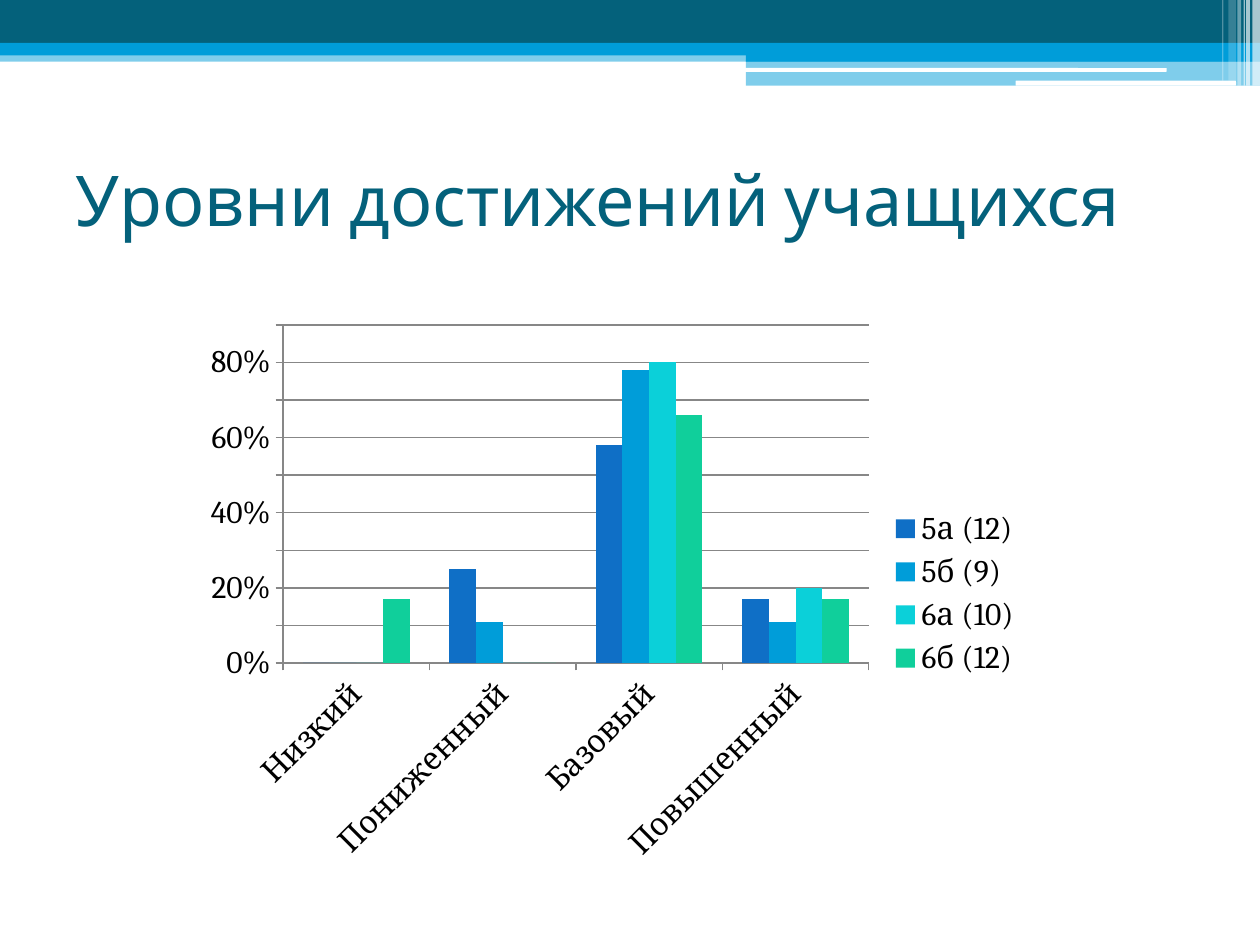
import pptx
import pptx.chart.data
import pptx.dml.color
import pptx.enum.chart
import pptx.enum.shapes
import pptx.enum.text
import pptx.oxml
import pptx.oxml.ns
import pptx.util

# Slide grid: 1000 columns by 750 rows
COLUMNS, ROWS = 1000, 750
CELL = pptx.util.Inches(10) // COLUMNS
TEAL, BLUE, WHITE, GRAY = "04617B", "009DD9", "FFFFFF", "878787"
RECTANGLE = pptx.enum.shapes.MSO_SHAPE.RECTANGLE
ROUNDED = pptx.enum.shapes.MSO_SHAPE.ROUNDED_RECTANGLE

# left, top, width, height within the banner; colour, opacity in percent, shape
BANNER_PARTS = [
    (0, 40, 1000, 9, BLUE, 50, RECTANGLE),
    (0, 0, 1000, 34, TEAL, 100, RECTANGLE),
    (0, 34, 1000, 10, BLUE, 100, RECTANGLE),
    (592, 39, 408, 10, BLUE, 100, RECTANGLE),
    (592, 48, 408, 20, BLUE, 50, RECTANGLE),
    (591, 54, 335, 3, WHITE, 100, ROUNDED),
    (806, 64, 175, 4, WHITE, 100, ROUNDED),
]
# left, width, height, opacity of the light stripes at the right end
STRIPES = [(994, 6, 68, 65), (989, 3, 68, 65), (987, 1, 68, 60),
           (982, 3, 68, 40), (975, 6, 64, 20), (970, 1, 64, 30)]

CATEGORIES = ["Низкий", "Пониженный", "Базовый", "Повышенный"]
SERIES = [
    ("5а (12)", (0, 0.25, 0.58, 0.17), "0F6FC6"),
    ("5б (9)", (0, 0.11, 0.78, 0.11), BLUE),
    ("6а (10)", (0, 0, 0.8, 0.2), "0BD0D9"),
    ("6б (12)", (0.17, 0, 0.66, 0.17), "10CF9B"),
]


def color(value):
    return pptx.dml.color.RGBColor.from_string(value)


def set_attributes(target, values):
    for name, value in values.items():
        setattr(target, name, value)


def emu(box):
    return [cells * CELL for cells in box]


def add_bar(slide, box, fill, opacity, kind):
    shape = slide.shapes.add_shape(kind, *emu(box))
    shape.shadow.inherit = False
    shape.line.fill.background()
    shape.fill.solid()
    shape.fill.fore_color.rgb = color(fill)
    if opacity < 100:
        fill_color = shape.fill._xPr.find(".//" + pptx.oxml.ns.qn("a:srgbClr"))
        alpha = pptx.oxml.parse_xml(
            f'<a:alpha {pptx.oxml.ns.nsdecls("a")} val="{opacity * 1000}"/>')
        fill_color.append(alpha)


def add_banner(slide, left, top):
    stripes = [(x, 0, width, height, WHITE, opacity, RECTANGLE)
               for x, width, height, opacity in STRIPES]
    for x, y, width, height, fill, opacity, kind in BANNER_PARTS + stripes:
        add_bar(slide, (left + x, top + y, width, height), fill, opacity, kind)


def add_title(slide, box, text):
    frame = slide.shapes.add_textbox(*emu(box)).text_frame
    set_attributes(frame, {"word_wrap": True,
                           "vertical_anchor": pptx.enum.text.MSO_ANCHOR.MIDDLE})
    run = frame.paragraphs[0].add_run()
    run.text = text
    set_attributes(run.font, {"name": "Cabin", "size": pptx.util.Pt(40)})
    run.font.color.rgb = color(TEAL)


def add_level_chart(slide, box):
    data = pptx.chart.data.CategoryChartData(number_format="0%")
    data.categories = CATEGORIES
    for name, values, _ in SERIES:
        data.add_series(name, values)
    chart = slide.shapes.add_chart(
        pptx.enum.chart.XL_CHART_TYPE.COLUMN_CLUSTERED, *emu(box), data).chart
    set_attributes(chart, {"has_title": False, "has_legend": True})
    set_attributes(chart.font, {"name": "Cambria", "size": pptx.util.Pt(18)})
    chart.font.color.rgb = color("000000")
    set_attributes(chart.legend, {
        "position": pptx.enum.chart.XL_LEGEND_POSITION.RIGHT,
        "include_in_layout": False})

    # Columns
    plot = chart.plots[0]
    set_attributes(plot, {"gap_width": 150, "overlap": 0, "vary_by_categories": False})
    for series, (_, _, fill) in zip(plot.series, SERIES):
        series.format.fill.solid()
        series.format.fill.fore_color.rgb = color(fill)

    # Axes
    outside = pptx.enum.chart.XL_TICK_MARK.OUTSIDE
    set_attributes(chart.value_axis, {
        "minimum_scale": 0, "maximum_scale": 0.9, "major_unit": 0.1,
        "major_tick_mark": outside, "has_major_gridlines": True})
    set_attributes(chart.value_axis.tick_labels,
                   {"number_format": "0%", "number_format_is_linked": False})
    chart.category_axis.major_tick_mark = outside
    chart.category_axis.tick_labels.font.size = pptx.util.Pt(18)
    label_body = chart.category_axis._element.find(
        ".//" + pptx.oxml.ns.qn("a:bodyPr"))
    label_body.set("rot", str(-45 * 60000))
    for part in (chart.value_axis, chart.category_axis, chart.value_axis.major_gridlines):
        part.format.line.color.rgb = color(GRAY)
        part.format.line.width = pptx.util.Pt(0.75)


def main():
    presentation = pptx.Presentation()
    set_attributes(presentation, {"slide_width": COLUMNS * CELL,
                                  "slide_height": ROWS * CELL})
    slide = presentation.slides.add_slide(presentation.slide_layouts[6])
    add_banner(slide, 0, 0)
    add_title(slide, (50, 99, 900, 117), "Уровни достижений учащихся")
    add_level_chart(slide, (154, 249, 667, 444))
    presentation.save("out.pptx")


if __name__ == "__main__":
    main()
